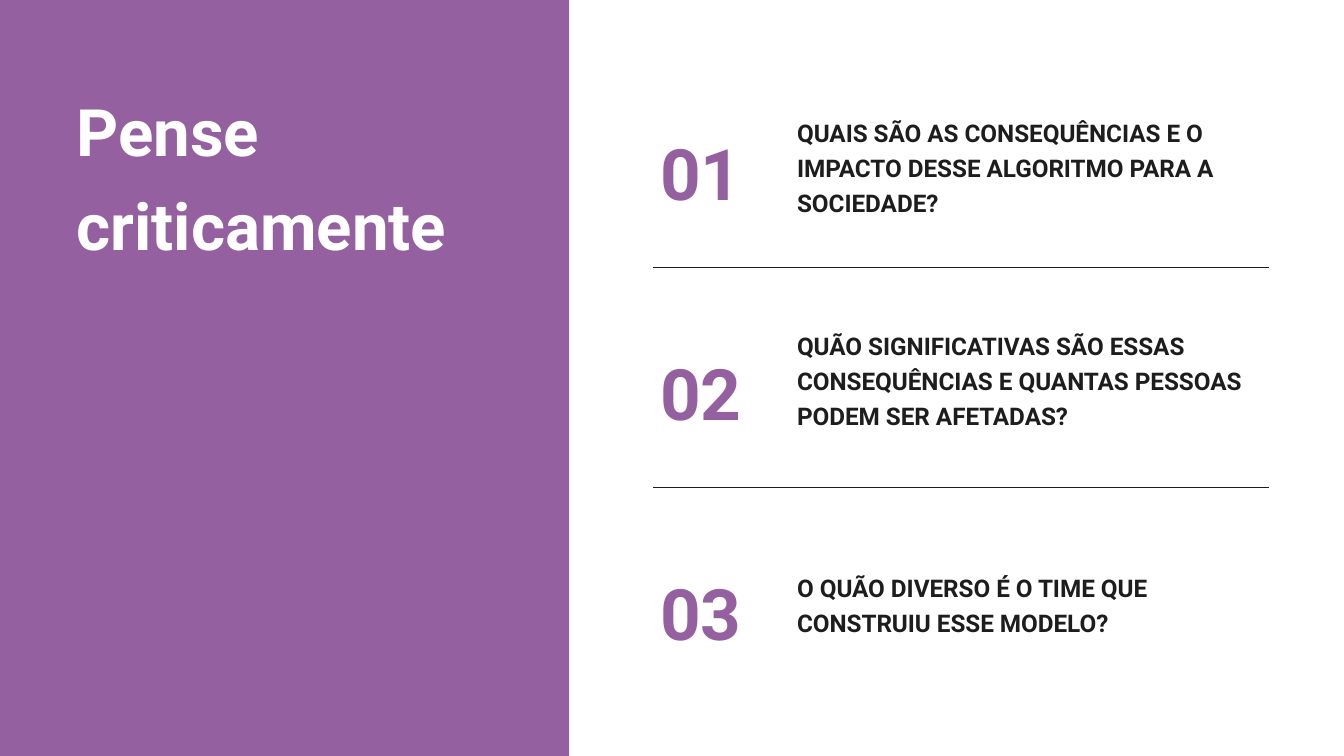
from lxml import etree
from pptx import Presentation
from pptx import util as u
from pptx.dml.color import RGBColor
from pptx.enum import shapes, text
from pptx.oxml.ns import qn

PURPLE, INK, WHITE = "9460A0", "1E1D1D", "FFFFFF"
ROW_STEP = 118
NUMBER_TOP = 60.2
RULE_TOP = 143.3

# Each question: text, top and size of its box
QUESTIONS = [
    ("QUAIS SÃO AS CONSEQUÊNCIAS E O IMPACTO DESSE ALGORITMO PARA A SOCIEDADE?",
     60.5, 245, 53),
    ("QUÃO SIGNIFICATIVAS SÃO ESSAS CONSEQUÊNCIAS E QUANTAS PESSOAS PODEM SER AFETADAS?",
     174.2, 252, 53),
    ("O QUÃO DIVERSO É O TIME QUE CONSTRUIU ESSE MODELO?",
     303.8, 252, 34.6),
]


def color(value):
    return RGBColor.from_string(value)


def set_values(target, values):
    for name, value in values.items():
        setattr(target, name, value)


def place(shape, left, top, width, height):
    set_values(shape, {"left": u.Pt(left), "top": u.Pt(top),
                       "width": u.Pt(width), "height": u.Pt(height)})


def write(shape, lines, size, font_color, alignment=text.PP_ALIGN.LEFT):
    frame = shape.text_frame
    set_values(frame, {
        "margin_left": 0, "margin_top": 0, "margin_right": 0, "margin_bottom": 0,
        "word_wrap": True, "vertical_anchor": text.MSO_ANCHOR.TOP,
        "auto_size": text.MSO_AUTO_SIZE.SHAPE_TO_FIT_TEXT,
    })
    frame.text = "\n".join(lines)
    for paragraph in frame.paragraphs:
        set_values(paragraph, {"alignment": alignment, "line_spacing": 1.2,
                               "space_before": u.Pt(0)})
        set_values(paragraph.font, {"name": "Roboto", "size": u.Pt(size), "bold": True})
        paragraph.font.color.rgb = color(font_color)


def add_panel(slide, width, height):
    panel = slide.shapes.add_shape(shapes.MSO_SHAPE.RECTANGLE, 0, 0, u.Pt(width), height)
    panel.shadow.inherit = False
    panel.fill.solid()
    panel.fill.fore_color.rgb = color(PURPLE)
    panel.line.fill.background()


def add_title(slide, lines):
    title = slide.shapes.title
    place(title, 41, 40.3, 223, 93.6)
    write(title, lines, 35, WHITE)
    # Bring the title in front of the panel
    slide.shapes._spTree.append(title._element)


def add_label(slide, box, label, size, font_color, alignment=text.PP_ALIGN.LEFT):
    shape = slide.shapes.add_textbox(*map(u.Pt, box))
    write(shape, [label], size, font_color, alignment)


def add_rule(slide, top):
    rule = slide.shapes.add_connector(
        shapes.MSO_CONNECTOR.STRAIGHT, u.Pt(350), u.Pt(top), u.Pt(679.7), u.Pt(top))
    rule.line.width = u.Pt(0.75)
    rule.line.color.rgb = color(INK)
    etree.SubElement(rule._element.spPr, qn("a:effectLst"))


def main():
    presentation = Presentation()
    set_values(presentation, {"slide_width": u.Pt(720), "slide_height": u.Pt(405)})
    slide = presentation.slides.add_slide(presentation.slide_layouts[5])

    # Left panel with the title
    add_panel(slide, 305, presentation.slide_height)
    add_title(slide, ["Pense", "criticamente"])

    # Numbered questions, with rules between them
    for index, (question, top, width, height) in enumerate(QUESTIONS):
        offset = index * ROW_STEP
        add_label(slide, (350, NUMBER_TOP + offset, 51, 46), f"{index + 1:02}",
                  38, PURPLE, text.PP_ALIGN.CENTER)
        add_label(slide, (427, top, width, height), question, 13, INK)
        if index < len(QUESTIONS) - 1:
            add_rule(slide, RULE_TOP + offset)

    presentation.save("out.pptx")


if __name__ == "__main__":
    main()
